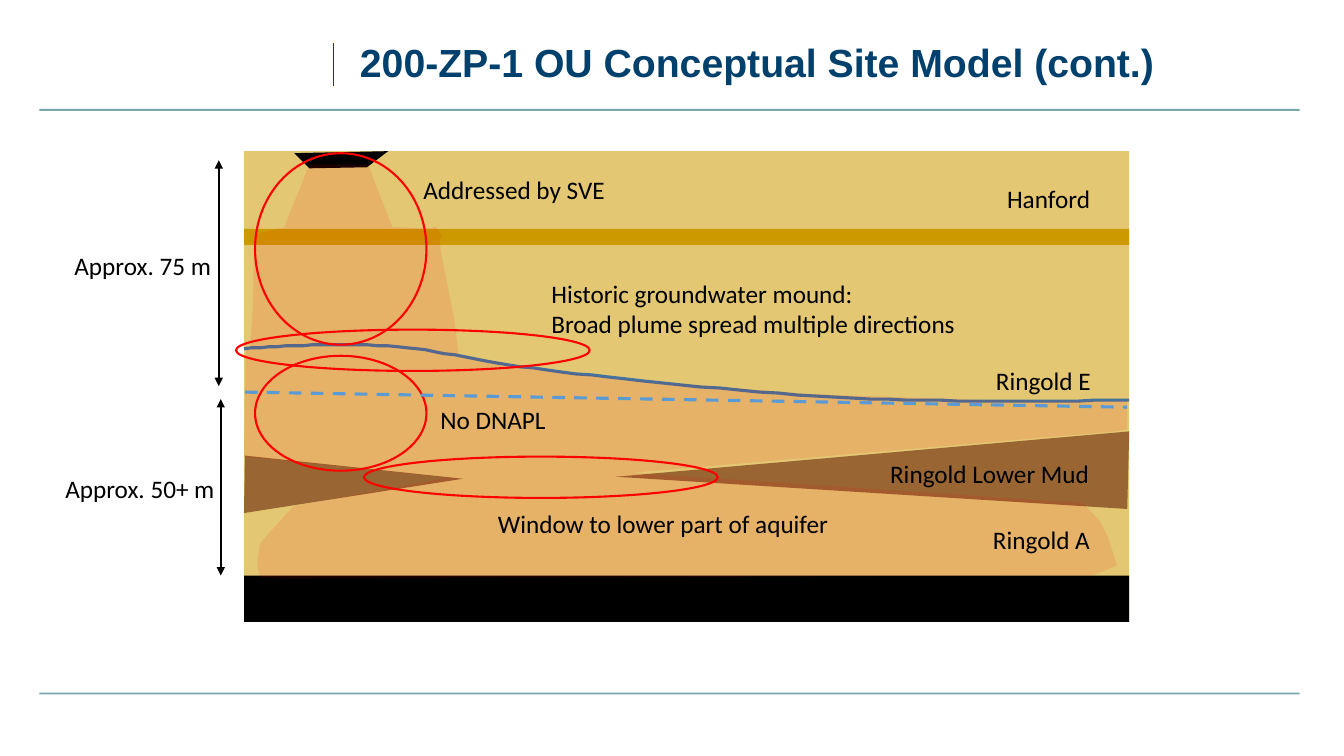
import pptx
import pptx.dml.color
import pptx.enum.dml
import pptx.enum.shapes
import pptx.enum.text
import pptx.oxml
import pptx.oxml.ns
import pptx.util

COLORS = {
    "navy": "00406C", "rule": "7BA6AD", "sand": "CC9900", "mud": "996633",
    "black": "000000", "water": "43739E", "table": "5B9BD5", "red": "FF0000",
}
SHAPES = pptx.enum.shapes.MSO_SHAPE


def curve_points(start, segments, steps=16):
    points = [start]
    for first, second, end in segments:
        origin = points[-1]
        for step in range(1, steps + 1):
            t = step / steps
            weights = ((1 - t) ** 3, 3 * t * (1 - t) ** 2, 3 * t * t * (1 - t), t ** 3)
            corners = (origin, first, second, end)
            points.append(tuple(sum(w * c[axis] for w, c in zip(weights, corners))
                                for axis in (0, 1)))
    return points


class SiteModelSlide:
    scale = 9144
    title_font = "Arial"
    label_font = "Calibri"

    def __init__(self, presentation):
        self.slide = presentation.slides.add_slide(presentation.slide_layouts[5])

    def emu(self, *lengths):
        return [pptx.util.Emu(length * self.scale) for length in lengths]

    def color(self, name):
        return pptx.dml.color.RGBColor.from_string(COLORS[name])

    def child(self, parent, tag, **attributes):
        element = pptx.oxml.parse_xml(f"<a:{tag} {pptx.oxml.ns.nsdecls('a')}/>")
        for name, value in attributes.items():
            element.set(name, value)
        parent.append(element)

    def paint(self, shape, fill=None, line=None, width=1.5, opacity=100):
        shape.shadow.inherit = False
        if fill:
            shape.fill.solid()
            shape.fill.fore_color.rgb = self.color(fill)
            if opacity < 100:
                color = shape._element.spPr.find(".//" + pptx.oxml.ns.qn("a:srgbClr"))
                self.child(color, "alpha", val=str(opacity * 1000))
        else:
            shape.fill.background()
        if line:
            shape.line.color.rgb = self.color(line)
            shape.line.width = pptx.util.Pt(width)
        else:
            shape.line.fill.background()

    def shape(self, kind, box, **style):
        self.paint(self.slide.shapes.add_shape(kind, *self.emu(*box)), **style)

    def outline(self, points, close=True, **style):
        builder = self.slide.shapes.build_freeform(*points[0], scale=self.scale)
        builder.add_line_segments(points[1:], close=close)
        self.paint(builder.convert_to_shape(), **style)

    def line(self, start, end, color, width, dashed=False, arrows=False):
        connector = self.slide.shapes.add_connector(
            pptx.enum.shapes.MSO_CONNECTOR.STRAIGHT, *self.emu(*start, *end))
        connector.line.color.rgb = self.color(color)
        connector.line.width = pptx.util.Pt(width)
        if dashed:
            connector.line.dash_style = pptx.enum.dml.MSO_LINE.DASH
        if arrows:
            for tag in ("headEnd", "tailEnd"):
                self.child(connector._element.spPr.find(pptx.oxml.ns.qn("a:ln")),
                           tag, type="triangle")
        self.child(connector._element.spPr, "effectLst")

    def add_text(self, paragraph, text, font, size, color, bold=False):
        run = paragraph.add_run()
        run.text = text
        run.font.name = font
        run.font.size = pptx.util.Pt(size)
        run.font.bold = bold
        run.font.color.rgb = self.color(color)

    def title(self, box, text):
        title = self.slide.shapes.title
        title.left, title.top, title.width, title.height = self.emu(*box)
        frame = title.text_frame
        frame.word_wrap = True
        frame.vertical_anchor = pptx.enum.text.MSO_ANCHOR.MIDDLE
        paragraph = frame.paragraphs[0]
        paragraph.alignment = pptx.enum.text.PP_ALIGN.LEFT
        paragraph.line_spacing = 0.9
        self.add_text(paragraph, text, self.title_font, 28, "navy", bold=True)

    def label(self, box, *lines):
        frame = self.slide.shapes.add_textbox(*self.emu(*box)).text_frame
        frame.word_wrap = False
        frame.auto_size = pptx.enum.text.MSO_AUTO_SIZE.SHAPE_TO_FIT_TEXT
        for index, text in enumerate(lines):
            paragraph = frame.add_paragraph() if index else frame.paragraphs[0]
            self.add_text(paragraph, text, self.label_font, 18, "black")


def main():
    presentation = pptx.Presentation()
    presentation.slide_width = pptx.util.Inches(13.33)
    presentation.slide_height = pptx.util.Inches(7.5)
    model = SiteModelSlide(presentation)

    for top in (108, 687):
        model.shape(SHAPES.RECTANGLE, (39, top, 1250, 2), fill="rule")
    model.line((331, 43), (331, 85), "navy", 0.5)
    model.title((347, 8, 971, 112), "200-ZP-1 OU Conceptual Site Model (cont.)")

    model.shape(SHAPES.RECTANGLE, (242, 150, 878, 467), fill="sand", opacity=55)
    for mud_wedge in ([(243, 452), (459, 475), (242, 509)],
                      [(1120, 428), (611, 473), (1118, 505)]):
        model.outline(mud_wedge, fill="mud")
    model.shape(SHAPES.RECTANGLE, (242, 571, 878, 46), fill="black")
    groundwater_mound = curve_points((242, 346), [
        ((286, 343), (331, 340), (384, 343)),
        ((436, 347), (479, 360), (556, 369)),
        ((633, 378), (752, 390), (846, 395)),
        ((940, 399), (1030, 398), (1120, 397)),
    ])
    model.outline(groundwater_mound, close=False, line="water", width=2.25)
    waste_trench = [(292, 152), (307, 167), (364, 166), (385, 150)]
    model.outline(waste_trench, fill="black")
    model.shape(SHAPES.RECTANGLE, (242, 227, 878, 16), fill="sand")

    plume = [
        (305, 167), (300, 181), (287, 212), (282, 226), (257, 231), (252, 236),
        (252, 239), (251, 302), (248, 346), (244, 343), (242, 453), (444, 474),
        (291, 502), (258, 539), (255, 561), (258, 573), (284, 574), (295, 574),
        (1050, 571), (1084, 571), (1108, 561), (1099, 533), (1091, 517),
        (1074, 499), (627, 469), (1107, 428), (1118, 426), (1118, 398),
        (978, 397), (801, 391), (613, 376), (522, 364), (455, 352), (450, 314),
        (439, 259), (436, 239), (438, 233), (432, 225), (425, 227), (389, 225),
        (365, 163), (309, 163),
    ]
    model.outline(plume, fill="red", opacity=10)

    for highlight in ((253, 152, 170, 190), (234, 327, 351, 41),
                      (361, 453, 351, 41), (253, 353, 170, 114)):
        model.shape(SHAPES.OVAL, highlight, line="red")
    model.line((243, 389), (1118, 404), "table", 2.25, dashed=True)
    for x, top, bottom in ((217, 159, 383), (219, 396, 571)):
        model.line((x, top), (x, bottom), "black", 1.5, arrows=True)

    model.label((537, 271, 426, 71), "Historic groundwater mound:",
                "Broad plume spread multiple directions")
    for left, top, width, text in (
        (410, 168, 202, "Addressed by SVE"),
        (873, 450, 220, "Ringold Lower Mud"),
        (64, 243, 157, "Approx. 75 m"),
        (427, 396, 126, "No DNAPL"),
        (484, 499, 352, "Window to lower part of aquifer"),
        (978, 358, 115, "Ringold E"),
        (975, 515, 117, "Ringold A"),
        (989, 177, 103, "Hanford"),
        (55, 465, 170, "Approx. 50+ m"),
    ):
        model.label((left, top, width, 40), text)

    presentation.save("out.pptx")


if __name__ == "__main__":
    main()
